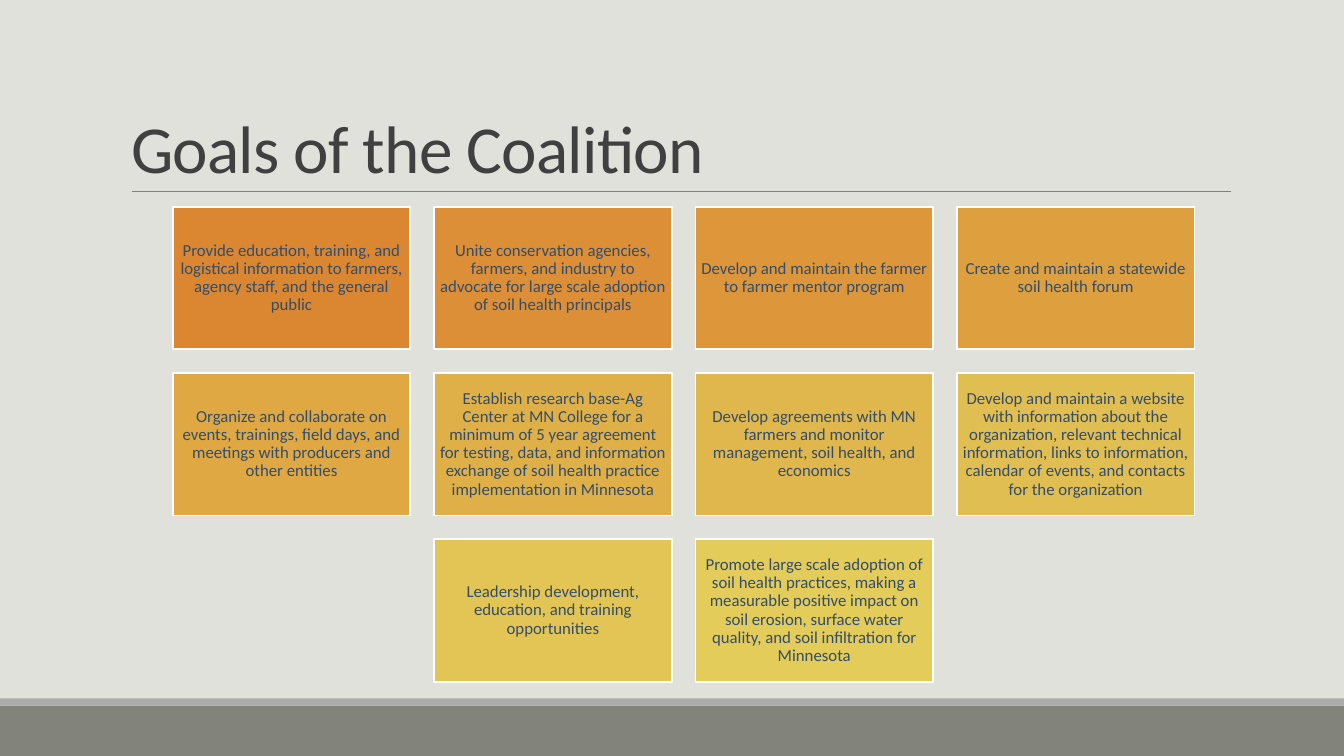
from pptx import Presentation
from pptx.dml.color import RGBColor as RGB
from pptx.enum.shapes import MSO_CONNECTOR as CONN, MSO_SHAPE as SHAPE
from pptx.enum.text import MSO_ANCHOR as ANCHOR, MSO_AUTO_SIZE as AUTO, PP_ALIGN as ALIGN
from pptx.oxml.ns import qn
from pptx.util import Pt
from lxml.etree import SubElement

FONT = "Calibri"
BACKGROUND = RGB(0xE1, 0xE1, 0xDB)
BAND = RGB(0x82, 0x84, 0x7C)
STRIPE = RGB(0xAC, 0xAD, 0xA8)
RULE = RGB(0x80, 0x80, 0x80)
TITLE = RGB(0x40, 0x40, 0x40)
CARD_TEXT = RGB(0x34, 0x4D, 0x69)
WHITE = RGB(0xFF, 0xFF, 0xFF)
CARD_FILLS = [
    RGB(0xDB, 0x86, 0x31), RGB(0xDC, 0x8F, 0x36), RGB(0xDD, 0x97, 0x3A),
    RGB(0xDE, 0xA0, 0x3F), RGB(0xDF, 0xA8, 0x43), RGB(0xDF, 0xB0, 0x48),
    RGB(0xE0, 0xB7, 0x4C), RGB(0xE1, 0xBE, 0x51), RGB(0xE2, 0xC5, 0x55),
    RGB(0xE3, 0xCC, 0x5A),
]

WIDTH, HEIGHT = 960, 540
COLUMNS = 4
CARD_W, CARD_H, GAP = 169.7, 101.8, 17
GRID_LEFT, GRID_TOP = 123.4, 147.6

GOALS = [
    "Provide education, training, and logistical information to farmers, "
    "agency staff, and the general public",
    "Unite conservation agencies, farmers, and industry to advocate for "
    "large scale adoption of soil health principals",
    "Develop and maintain the farmer to farmer mentor program",
    "Create and maintain a statewide soil health forum",
    "Organize and collaborate on events, trainings, field days, and "
    "meetings with producers and other entities",
    "Establish research base-Ag Center at MN College for a minimum of 5 year "
    "agreement for testing, data, and information exchange of soil health "
    "practice implementation in Minnesota",
    "Develop agreements with MN farmers and monitor management, soil health, "
    "and economics",
    "Develop and maintain a website with information about the organization, "
    "relevant technical information, links to information, calendar of events, "
    "and contacts for the organization",
    "Leadership development, education, and training opportunities",
    "Promote large scale adoption of soil health practices, making a measurable "
    "positive impact on soil erosion, surface water quality, and soil "
    "infiltration for Minnesota",
]


def add_rect(slide, x, y, w, h, fill):
    sp = slide.shapes.add_shape(SHAPE.RECTANGLE, Pt(x), Pt(y), Pt(w), Pt(h))
    sp.shadow.inherit = False
    sp.fill.solid()
    sp.fill.fore_color.rgb = fill
    sp.line.fill.background()
    return sp


def add_rule(slide, x1, x2, y):
    line = slide.shapes.add_connector(CONN.STRAIGHT, Pt(x1), Pt(y), Pt(x2), Pt(y))
    line.line.color.rgb = RULE
    line.line.width = Pt(0.5)
    SubElement(line._element.spPr, qn("a:effectLst"))


def write(tf, text, size, color, align, spacing):
    tf.word_wrap = True
    tf.auto_size = AUTO.NONE
    p = tf.paragraphs[0]
    p.alignment = align
    p.line_spacing = spacing
    r = p.add_run()
    r.text = text
    r.font.name = FONT
    r.font.size = Pt(size)
    r.font.color.rgb = color
    return r


def set_title(slide, text):
    sp = slide.shapes.title
    sp.left, sp.top, sp.width, sp.height = Pt(86.4), Pt(22.5), Pt(792), Pt(114.5)
    tf = sp.text_frame
    tf.vertical_anchor = ANCHOR.BOTTOM
    r = write(tf, text, 48, TITLE, ALIGN.LEFT, 0.85)
    r.font._element.set("spc", "-50")


def add_card(slide, x, y, text, fill):
    sp = add_rect(slide, x, y, CARD_W, CARD_H, fill)
    sp.line.color.rgb = WHITE
    sp.line.width = Pt(1.25)
    tf = sp.text_frame
    tf.vertical_anchor = ANCHOR.MIDDLE
    tf.margin_left = tf.margin_right = tf.margin_top = tf.margin_bottom = Pt(3.6)
    write(tf, text, 12, CARD_TEXT, ALIGN.CENTER, 0.9)


def add_goal_grid(slide):
    for i, (goal, fill) in enumerate(zip(GOALS, CARD_FILLS)):
        row, col = divmod(i, COLUMNS)
        in_row = min(COLUMNS, len(GOALS) - row * COLUMNS)
        col += (COLUMNS - in_row) / 2
        x = GRID_LEFT + col * (CARD_W + GAP)
        y = GRID_TOP + row * (CARD_H + GAP)
        add_card(slide, x, y, goal, fill)


def main():
    prs = Presentation()
    prs.slide_width, prs.slide_height = Pt(WIDTH), Pt(HEIGHT)
    slide = prs.slides.add_slide(prs.slide_layouts[5])
    slide.background.fill.solid()
    slide.background.fill.fore_color.rgb = BACKGROUND
    add_rect(slide, 0, 504, WIDTH, 36, BAND)
    add_rect(slide, 0, 498.8, WIDTH, 5.2, STRIPE)
    add_rule(slide, 94.3, 879, 136.8)
    set_title(slide, "Goals of the Coalition")
    add_goal_grid(slide)
    prs.save("out.pptx")


if __name__ == "__main__":
    main()
